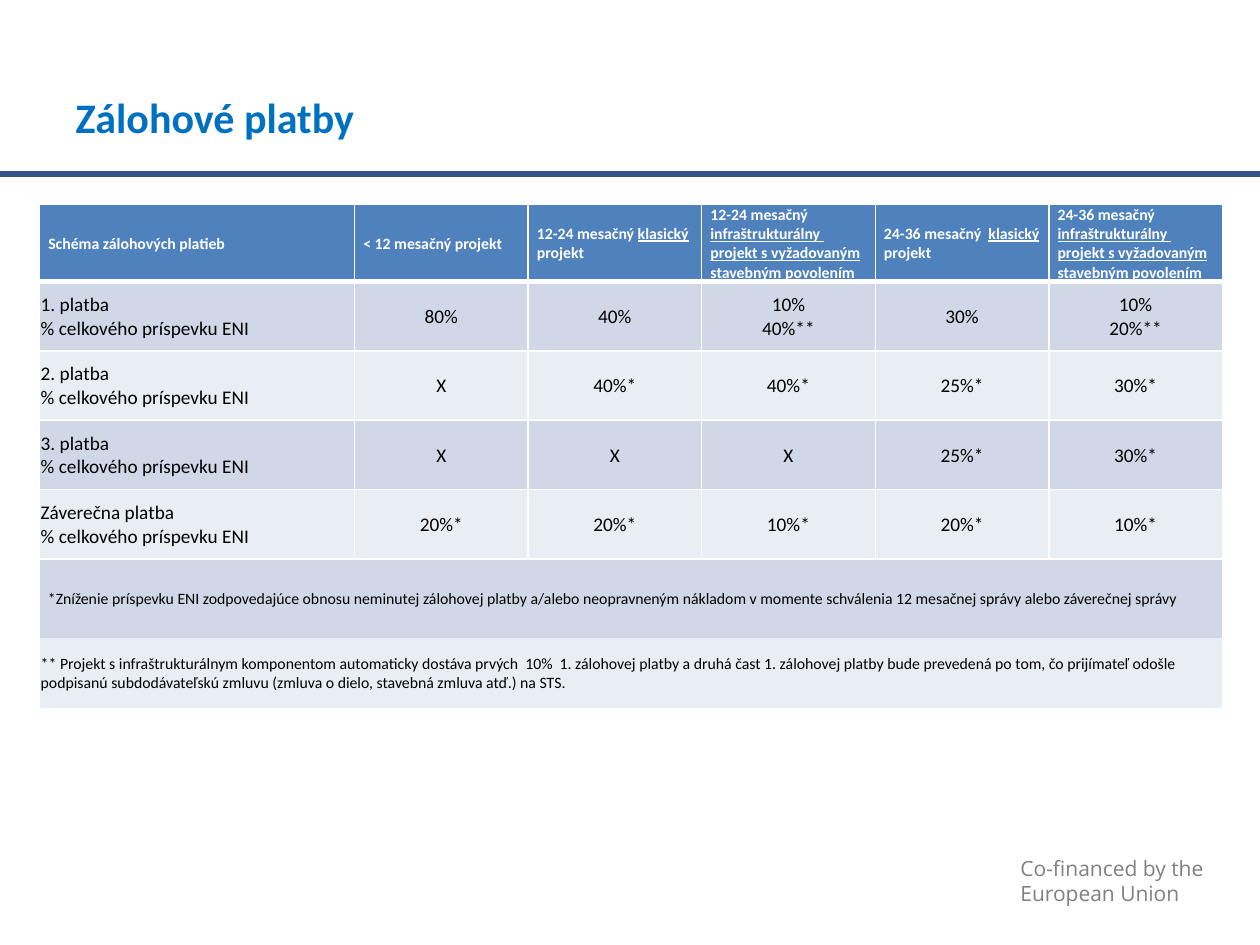
from dataclasses import dataclass

from lxml import etree
from pptx import Presentation
from pptx.dml.color import RGBColor
from pptx.enum import shapes, text
from pptx.oxml import ns
from pptx.util import Pt


@dataclass(frozen=True)
class Theme:
    font: str = "Calibri"
    footer_font: str = "Open Sans"
    title: str = "0070C0"
    rule: str = "37518A"
    header: str = "4F81BD"
    bands: tuple = ("D0D8E8", "E9EDF4")
    light: str = "FFFFFF"
    dark: str = "000000"
    footer: str = "808080"
    title_size: int = 24
    footer_size: int = 12
    body_size: int = 11
    small_size: int = 9


THEME = Theme()
COLUMNS = [180] + [99.2] * 5
ROWS = [44] + [39.6] * 4 + [45.4, 39.6]
PERMIT = "infraštrukturálny  projekt s vyžadovaným stavebným povolením"

# Each header is a list of (text, underlined) runs.
HEADERS = [
    [("Schéma zálohových platieb", False)],
    [("< 12 mesačný projekt", False)],
    [("12-24 mesačný ", False), ("klasický ", True), ("projekt", False)],
    [("12-24 mesačný ", False), (PERMIT, True)],
    [("24-36 mesačný  ", False), ("klasický ", True), ("projekt", False)],
    [("24-36 mesačný ", False), (PERMIT, True)],
]
PAYMENTS = [
    ("1. platba", "80%", "40%", "10%\v40%**", "30%", "10%\v20%**"),
    ("2. platba", "X", "40%*", "40%*", "25%*", "30%*"),
    ("3. platba", "X", "X", "X", "25%*", "30%*"),
    ("Záverečna platba", "20%*", "20%*", "10%*", "20%*", "10%*"),
]
REDUCTION_NOTE = (
    "*Zníženie príspevku ENI zodpovedajúce obnosu neminutej zálohovej platby "
    "a/alebo neopravneným nákladom v momente schválenia 12 mesačnej správy "
    "alebo záverečnej správy"
)
INFRASTRUCTURE_NOTE = (
    "** Projekt s infraštrukturálnym komponentom automaticky dostáva prvých  10%  "
    "1. zálohovej platby a druhá čast 1. zálohovej platby bude prevedená po tom, "
    "čo prijímateľ odošle podpisanú subdodávateľskú zmluvu (zmluva o dielo, "
    "stavebná zmluva atď.) na STS."
)


def set_font(p, size, color, bold=False, name=THEME.font):
    p.font.name = name
    p.font.size = Pt(size)
    p.font.bold = bold
    p.font.color.rgb = RGBColor.from_string(color)


def add_title(s, title):
    sp = s.shapes.title
    sp.left, sp.top, sp.width, sp.height = Pt(36), Pt(21.6), Pt(511.2), Pt(90)
    tf = sp.text_frame
    tf.text = title
    tf.vertical_anchor = text.MSO_ANCHOR.MIDDLE
    p = tf.paragraphs[0]
    p.alignment = text.PP_ALIGN.LEFT
    set_font(p, THEME.title_size, THEME.title, bold=True)


def add_rule(s, y, width):
    line = s.shapes.add_connector(shapes.MSO_CONNECTOR.STRAIGHT, 0, Pt(y), width, Pt(y))
    line.line.color.rgb = RGBColor.from_string(THEME.rule)
    line.line.width = Pt(3)
    etree.SubElement(line._element.spPr, ns.qn("a:effectLst"))


def add_footer(s, words):
    tf = s.shapes.add_textbox(Pt(576), Pt(485.3), Pt(123.8), Pt(36)).text_frame
    tf.word_wrap = True
    tf.text = words
    for p in tf.paragraphs:
        set_font(p, THEME.footer_size, THEME.footer, name=THEME.footer_font)


def set_borders(cell, **widths):
    """Draw white borders on the sides L, R, T, B; a side left out has none."""
    tcPr = cell._tc.get_or_add_tcPr()
    for side in "LRTB":
        ln = etree.SubElement(tcPr, ns.qn(f"a:ln{side}"))
        if side not in widths:
            etree.SubElement(ln, ns.qn("a:noFill"))
            continue
        ln.set("w", str(Pt(widths[side])))
        fill = etree.SubElement(ln, ns.qn("a:solidFill"))
        etree.SubElement(fill, ns.qn("a:srgbClr"), val=THEME.light)


def format_cell(cell, fill, borders, left=0.7):
    set_borders(cell, **borders)
    cell.fill.solid()
    cell.fill.fore_color.rgb = RGBColor.from_string(fill)
    cell.vertical_anchor = text.MSO_ANCHOR.MIDDLE
    cell.margin_left, cell.margin_right = Pt(left), Pt(0.7)
    cell.margin_top, cell.margin_bottom = Pt(0.7), 0


def fill_header(table, grid):
    for col, runs in enumerate(HEADERS):
        cell = table.cell(0, col)
        format_cell(cell, THEME.header, {**grid, "B": 3}, left=5)
        p = cell.text_frame.paragraphs[0]
        set_font(p, THEME.small_size, THEME.light, bold=True)
        for words, underlined in runs:
            r = p.add_run()
            r.text = words
            r.font.underline = underlined


def fill_payments(table, grid):
    for row, (name, *shares) in enumerate(PAYMENTS, 1):
        label = f"{name}\n% celkového príspevku ENI"
        borders = {**grid, "T": 3} if row == 1 else grid
        for col, words in enumerate([label, *shares]):
            cell = table.cell(row, col)
            format_cell(cell, THEME.bands[(row - 1) % 2], borders)
            cell.text_frame.text = words
            for p in cell.text_frame.paragraphs:
                p.alignment = text.PP_ALIGN.CENTER if col else text.PP_ALIGN.LEFT
                set_font(p, THEME.body_size, THEME.dark)


def fill_note(table, row, words, borders, left=0.7):
    last = len(COLUMNS) - 1
    for col in range(last + 1):
        format_cell(table.cell(row, col), THEME.bands[(row - 1) % 2], borders, left)
    cell = table.cell(row, 0)
    cell.merge(table.cell(row, last))
    cell.text_frame.text = words
    set_font(cell.text_frame.paragraphs[0], THEME.small_size, THEME.dark)


def add_payment_table(s):
    frame = s.shapes.add_table(len(ROWS), len(COLUMNS), Pt(22.6), Pt(116.9),
                               Pt(sum(COLUMNS)), Pt(sum(ROWS)))
    table = frame.table
    table.first_row = table.horz_banding = False
    # The "No Style, No Grid" table style
    table._tbl.tblPr.find(ns.qn("a:tableStyleId")).text = (
        "{2D5ABB26-0587-4C30-8999-92F81FD0307C}")
    for column, width in zip(table.columns, COLUMNS):
        column.width = Pt(width)
    for row, height in zip(table.rows, ROWS):
        row.height = Pt(height)

    grid = dict.fromkeys("LRTB", 1)
    fill_header(table, grid)
    fill_payments(table, grid)
    fill_note(table, 5, REDUCTION_NOTE, dict.fromkeys("LRT", 1), left=4.8)
    fill_note(table, 6, INFRASTRUCTURE_NOTE, {})


def main():
    prs = Presentation()
    prs.slide_width, prs.slide_height = Pt(720), Pt(540)
    s = prs.slides.add_slide(prs.slide_layouts[5])
    add_rule(s, 99.4, prs.slide_width)
    add_footer(s, "Co-financed by the\nEuropean Union")
    add_title(s, "Zálohové platby")
    add_payment_table(s)
    prs.save("out.pptx")


if __name__ == "__main__":
    main()
